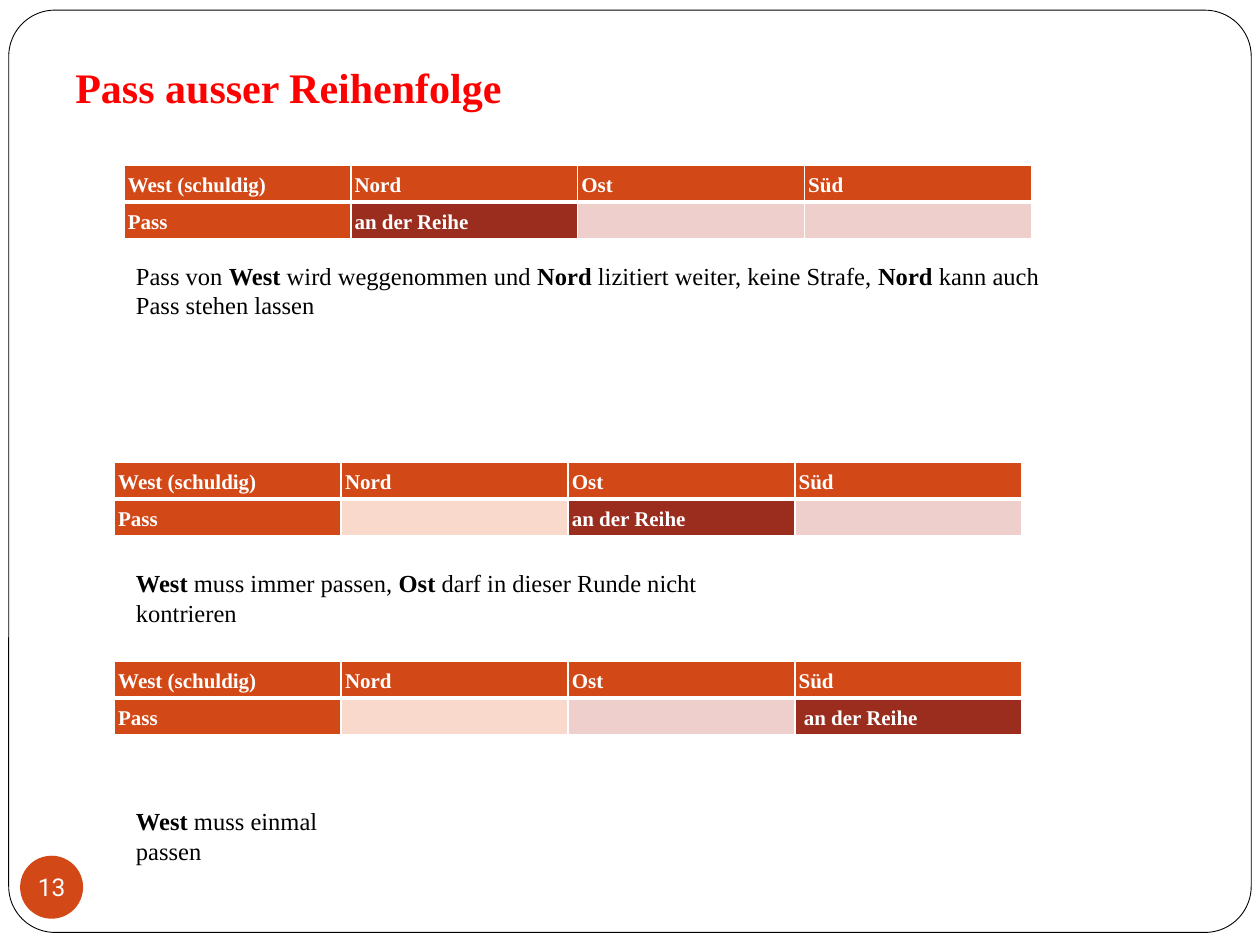
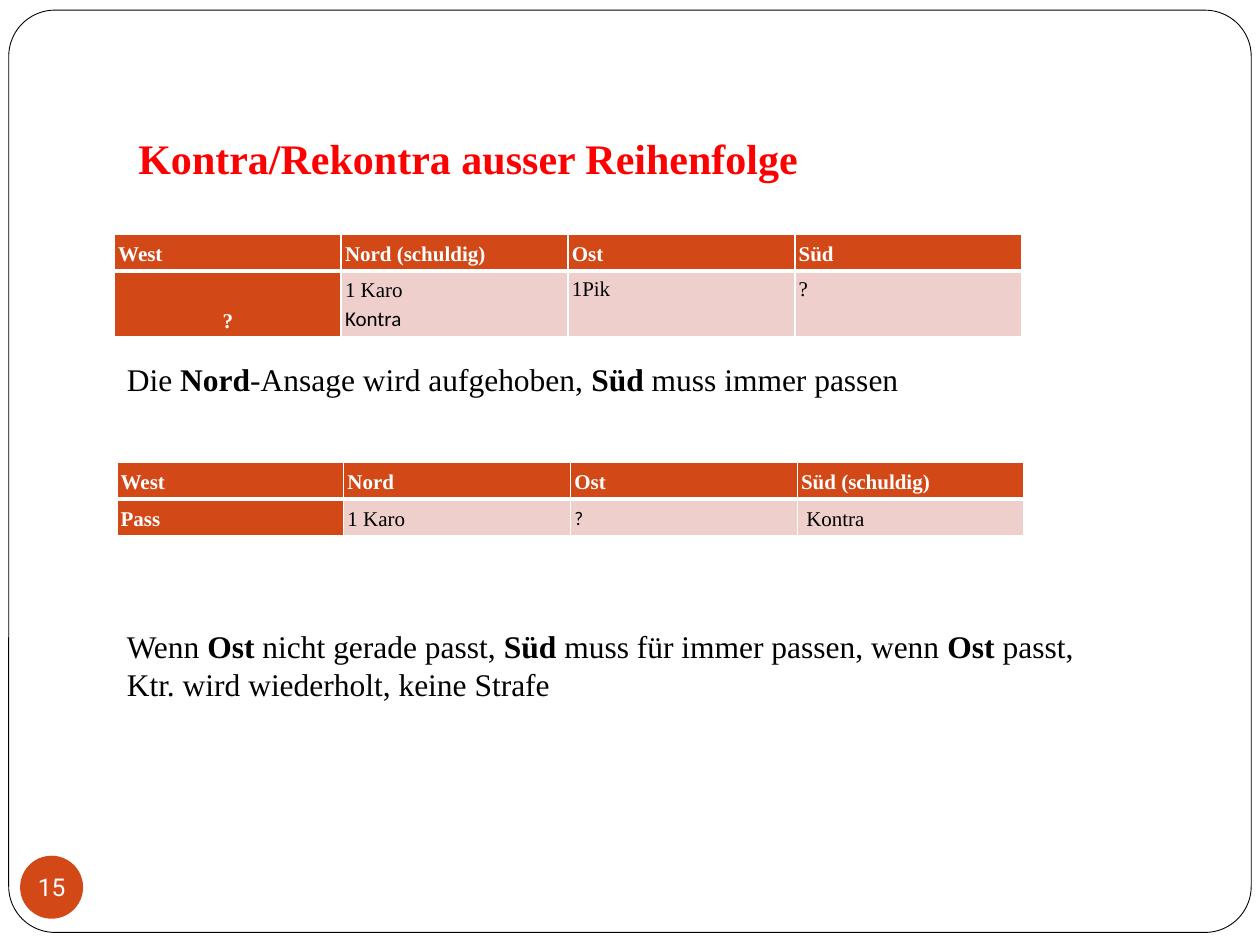
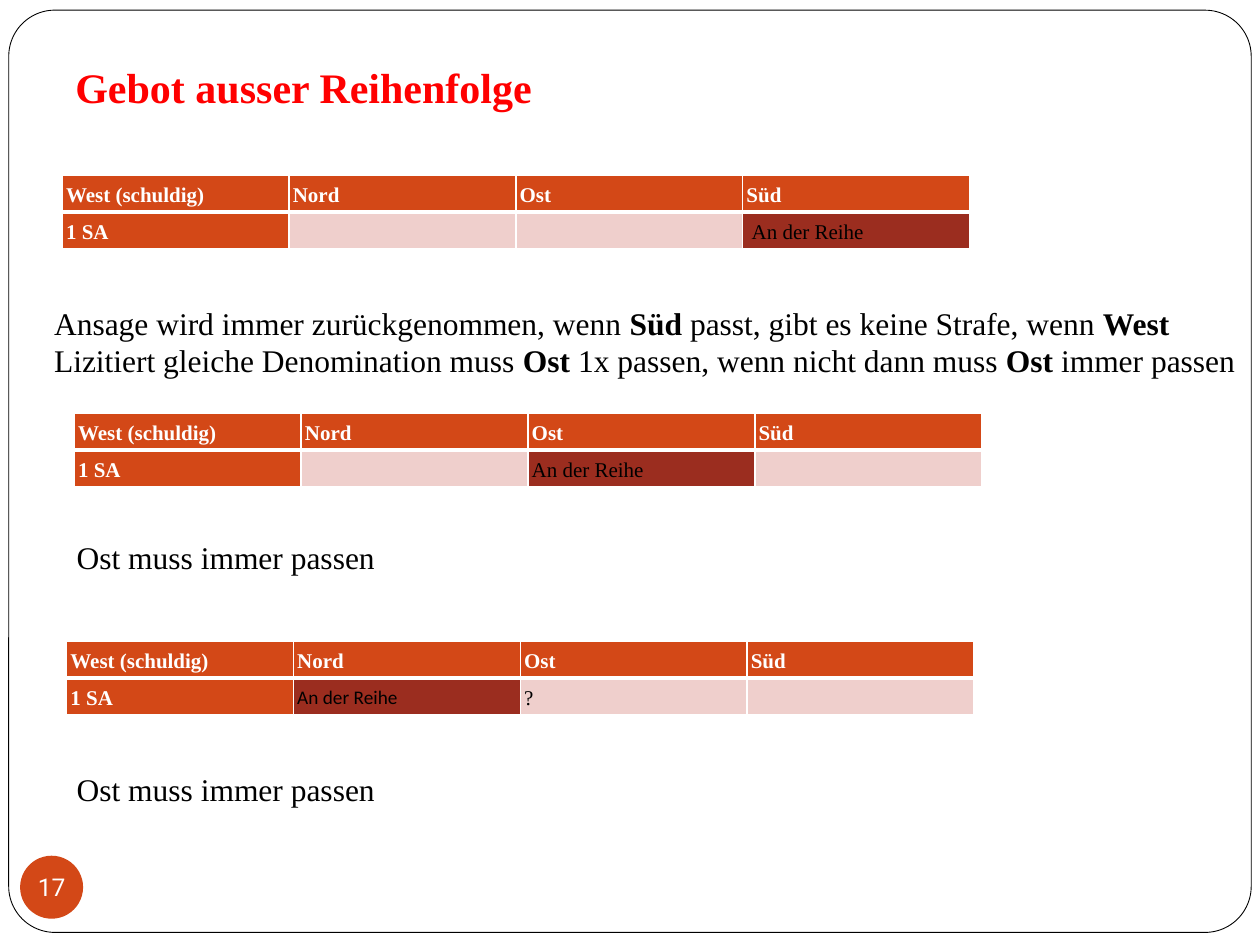
from dataclasses import dataclass

from lxml.etree import SubElement
from pptx import Presentation
from pptx.dml.color import RGBColor
from pptx.enum.shapes import MSO_SHAPE as SHAPE
from pptx.enum.text import MSO_ANCHOR as ANCHOR, PP_ALIGN as ALIGN
from pptx.oxml.ns import qn
from pptx.util import Pt

SERIF, SANS, BADGE_FONT = "Times New Roman", "Calibri", "Roboto"
WHITE, BLACK, RED = "FFFFFF", "000000", "FF0000"
ORANGE, MAROON, ROSE, PEACH = "D34817", "9B2D1F", "EFCFCC", "FAD9CD"
COL_W, ROW_H, CELL_PAD = 129.6, 19.6, 2.16
SEATS = ("West", "Nord", "Ost", "Süd")


@dataclass
class Cell:
    text: str = ""
    fill: str = ROSE
    color: str = BLACK
    bold: bool = False
    fonts: tuple = (SERIF,)
    size: float = 12
    indent: float = 0
    align: ALIGN = ALIGN.LEFT
    anchor: ANCHOR = ANCHOR.MIDDLE


def rgb(color):
    return RGBColor.from_string(color)


def paint(obj, color):
    obj.fill.solid()
    obj.fill.fore_color.rgb = rgb(color)


def add_run(p, text, size, color=BLACK, bold=False, font=SERIF):
    r = p.add_run()
    r.text = text
    r.font.size = Pt(size)
    r.font.bold = bold
    r.font.name = font
    r.font.color.rgb = rgb(color)


def set_insets(tf, left, top, right, bottom):
    tf.margin_left, tf.margin_top = Pt(left), Pt(top)
    tf.margin_right, tf.margin_bottom = Pt(right), Pt(bottom)


def add_shape(s, kind, box, fill):
    sp = s.shapes.add_shape(kind, *map(Pt, box))
    sp.shadow.inherit = False
    paint(sp, fill)
    return sp


def add_frame(s):
    sp = add_shape(s, SHAPE.ROUNDED_RECTANGLE, (5, 5.8, 710, 527), WHITE)
    sp.adjustments[0] = 0.05
    sp.line.color.rgb = rgb(BLACK)
    sp.line.width = Pt(0.5)


def add_page_badge(s, number):
    sp = add_shape(s, SHAPE.OVAL, (11.5, 489, 36, 36), ORANGE)
    sp.line.fill.background()
    tf = sp.text_frame
    tf.word_wrap = False
    tf.vertical_anchor = ANCHOR.MIDDLE
    set_insets(tf, 0, 0, 0, 0)
    p = tf.paragraphs[0]
    p.alignment = ALIGN.CENTER
    add_run(p, str(number), 14, WHITE, font=BADGE_FONT)


def add_title(s, box, text):
    tf = s.shapes.add_textbox(*map(Pt, box)).text_frame
    tf.word_wrap = True
    tf.vertical_anchor = ANCHOR.BOTTOM
    set_insets(tf, 7.2, 3.6, 7.2, 7.2)
    add_run(tf.paragraphs[0], text, 24, RED, True)


def add_note(s, box, text, size):
    tf = s.shapes.add_textbox(*map(Pt, box)).text_frame
    tf.word_wrap = True
    for i, line in enumerate(text.split("\n")):
        p = tf.add_paragraph() if i else tf.paragraphs[0]
        for k, part in enumerate(line.split("*")):
            if part:
                add_run(p, part, size, bold=k % 2 == 1)


def set_borders(cell, widths):
    tc_pr = cell._tc.get_or_add_tcPr()
    for side, width in zip("LRTB", widths):
        ln = SubElement(tc_pr, qn(f"a:ln{side}"), w=str(Pt(width)))
        fill = SubElement(ln, qn("a:solidFill"))
        SubElement(fill, qn("a:srgbClr"), val=WHITE)


def fill_cell(cell, c):
    set_borders(cell, (1, 1, 1, 3) if c.header else (1, 1, 3, 1))
    paint(cell, c.fill)


def write_cell(cell, c, header):
    set_borders(cell, (1, 1, 1, 3) if header else (1, 1, 3, 1))
    paint(cell, c.fill)
    set_insets(cell, CELL_PAD + c.indent, CELL_PAD, CELL_PAD, CELL_PAD)
    cell.vertical_anchor = c.anchor
    tf = cell.text_frame
    if not c.text:
        SubElement(tf.paragraphs[0]._p, qn("a:endParaRPr"), sz=str(c.size * 100))
        return
    lines = c.text.split("\n")
    for i, line in enumerate(lines):
        p = tf.add_paragraph() if i else tf.paragraphs[0]
        p.alignment = c.align
        p.line_spacing = 1.15
        add_run(p, line, c.size, c.color, c.bold, c.fonts[min(i, len(c.fonts) - 1)])


def add_bidding(s, left, top, guilty, bids, heights=(ROW_H, ROW_H)):
    tbl = s.shapes.add_table(2, len(SEATS), Pt(left), Pt(top),
                             Pt(COL_W * len(SEATS)), Pt(sum(heights))).table
    for row, height in zip(tbl.rows, heights):
        row.height = Pt(height)
    for i, (seat, bid) in enumerate(zip(SEATS, bids)):
        tbl.columns[i].width = Pt(COL_W)
        name = f"{seat} (schuldig)" if seat == guilty else seat
        write_cell(tbl.cell(0, i), lead(name), True)
        write_cell(tbl.cell(1, i), bid, False)


def lead(text, **style):
    return Cell(text, ORANGE, WHITE, True, **style)


def turn(text, color=BLACK, bold=False, **style):
    return Cell(text, MAROON, color, bold, **style)


def new_slide(prs, number, title, title_box=(36, 21.6, 648, 49.7)):
    s = prs.slides.add_slide(prs.slide_layouts[6])
    add_frame(s)
    add_title(s, title_box, title)
    add_page_badge(s, number)
    return s


def pass_slide(prs):
    s = new_slide(prs, 13, "Pass ausser Reihenfolge")
    own = lead("Pass")
    now = turn("an der Reihe", WHITE, True)
    now_south = turn("an der Reihe", WHITE, True, indent=3)
    add_bidding(s, 70.9, 94.5, "West", (own, now, Cell(), Cell()))
    add_bidding(s, 65.4, 264.3, "West", (own, Cell(fill=PEACH), now, Cell()))
    add_bidding(s, 65.4, 378, "West", (own, Cell(fill=PEACH), Cell(), now_south))
    add_note(s, (70.6, 145.4, 542, 58),
             "Pass von *West* wird weggenommen und *Nord* lizitiert weiter, "
             "keine Strafe, *Nord* kann auch\nPass stehen lassen", 14)
    add_note(s, (70.6, 321.1, 363, 41),
             "*West* muss immer passen, *Ost *darf in dieser Runde nicht kontrieren", 14)
    add_note(s, (70.6, 457.2, 144.7, 41), "*West* muss einmal passen", 14)


def double_slide(prs):
    s = new_slide(prs, 15, "Kontra/Rekontra ausser Reihenfolge", (72, 21.6, 612, 90))
    add_bidding(s, 65.4, 134, "Nord", (
        lead("?", align=ALIGN.CENTER, anchor=ANCHOR.BOTTOM),
        Cell("1 Karo\nKontra", fonts=(SERIF, SANS)),
        Cell("1Pik", anchor=ANCHOR.TOP),
        Cell("?", anchor=ANCHOR.TOP)), (ROW_H, 36.3))
    add_note(s, (65.4, 202.3, 470, 29),
             "Die *Nord*-Ansage wird aufgehoben, *Süd* muss immer passen", 18)
    add_bidding(s, 66.8, 264.3, "Süd", (
        lead("Pass"), Cell("1 Karo"), Cell("?", fonts=(SANS,), size=11),
        Cell("Kontra", indent=3)), (20.9, 20.9))
    add_note(s, (65.4, 355, 570, 51),
             "Wenn *Ost* nicht gerade passt, *Süd* muss für immer passen, "
             "wenn *Ost* passt,\nKtr. wird wiederholt, keine Strafe", 18)


def bid_slide(prs):
    s = new_slide(prs, 17, "Gebot ausser Reihenfolge")
    own = lead("1 SA")
    text = "An der Reihe"
    add_bidding(s, 35.6, 100.3, "West", (own, Cell(), Cell(), turn(text, indent=3)))
    add_bidding(s, 42.5, 236.2, "West", (own, Cell(), turn(text), Cell()))
    add_bidding(s, 38.1, 366.5, "West",
                (own, turn(text, fonts=(SANS,), size=11), Cell("?"), Cell()))
    add_note(s, (23.8, 169.9, 696, 51),
             "Ansage wird immer zurückgenommen, wenn *Süd* passt, gibt es keine Strafe, "
             "wenn *West*\nLizitiert gleiche Denomination muss *Ost* 1x passen, "
             "wenn nicht dann muss *Ost* immer passen", 18)
    for top in (303.8, 436.3):
        add_note(s, (36.7, top, 190, 29), "Ost muss immer passen", 18)


def main():
    prs = Presentation()
    prs.slide_width, prs.slide_height = Pt(720), Pt(540)
    pass_slide(prs)
    double_slide(prs)
    bid_slide(prs)
    prs.save("out.pptx")


if __name__ == "__main__":
    main()
